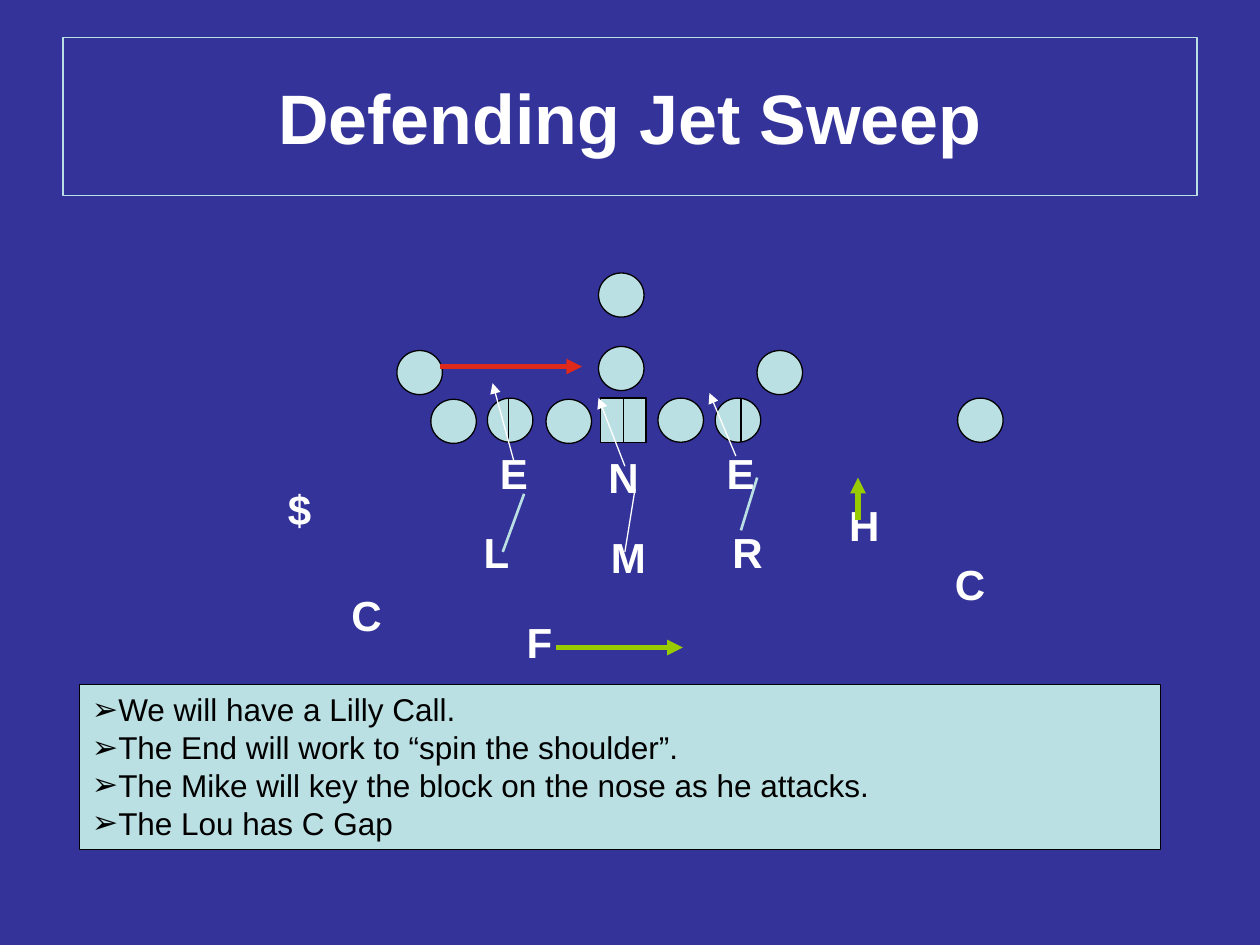
from lxml.etree import SubElement
from pptx import Presentation
from pptx.dml.color import RGBColor
from pptx.enum.shapes import MSO_CONNECTOR as Link, MSO_SHAPE as Form
from pptx.enum.text import MSO_ANCHOR as Anchor, PP_ALIGN as Align
from pptx.oxml.ns import qn
from pptx.util import Pt

NAVY = RGBColor(0x33, 0x33, 0x99)
PALE = RGBColor(0xBB, 0xE0, 0xE3)
WHITE = RGBColor(0xFF, 0xFF, 0xFF)
BLACK = RGBColor(0, 0, 0)
RED = RGBColor(0xDF, 0x29, 0x1B)
GREEN = RGBColor(0x99, 0xCC, 0x00)


class Board:
    """Holds the style and the current slide; lengths are in points."""
    face = "Arial"
    thin = 0.75

    def __init__(self, slide):
        self.slide = slide
        slide.background.fill.solid()
        slide.background.fill.fore_color.rgb = NAVY

    def shape(self, form, x, y, w, h, fill=PALE, edge=BLACK):
        item = self.slide.shapes.add_shape(form, Pt(x), Pt(y), Pt(w), Pt(h))
        item.shadow.inherit = False
        item.fill.solid()
        item.fill.fore_color.rgb = fill
        item.line.color.rgb = edge
        item.line.width = Pt(self.thin)
        return item

    def put_text(self, frame, lines, size, color, bold=False, align=Align.LEFT):
        frame.word_wrap = True
        frame.text = "\n".join(lines)
        for para in frame.paragraphs:
            para.alignment = align
            font = para.font
            font.name, font.size, font.bold = self.face, Pt(size), bold
            font.color.rgb = color

    def title(self, text, x, y, w, h):
        frame = self.shape(Form.RECTANGLE, x, y, w, h, NAVY, PALE).text_frame
        frame.vertical_anchor = Anchor.MIDDLE
        self.put_text(frame, [text], 40, WHITE, True, Align.CENTER)

    def label(self, text, x, y):
        box = self.slide.shapes.add_textbox(Pt(x), Pt(y), Pt(32.4), Pt(36))
        self.put_text(box.text_frame, [text], 24, WHITE, True)

    def notes(self, lines, x, y, w, h):
        frame = self.shape(Form.RECTANGLE, x, y, w, h).text_frame
        frame.vertical_anchor = Anchor.TOP
        self.put_text(frame, lines, 18, BLACK)
        for para in frame.paragraphs:
            props = para._p.get_or_add_pPr()
            props.set("marL", "0")
            props.set("indent", "0")
            SubElement(props, qn("a:buFont"), typeface=self.face)
            SubElement(props, qn("a:buChar"), char="➢")
            # Bullet settings come before the font defaults
            props.append(props.find(qn("a:defRPr")))

    def line(self, x1, y1, x2, y2, color, width=thin, arrow=False):
        item = self.slide.shapes.add_connector(
            Link.STRAIGHT, Pt(x1), Pt(y1), Pt(x2), Pt(y2))
        item.line.color.rgb = color
        item.line.width = Pt(width)
        if arrow:
            SubElement(item.line._get_or_add_ln(), qn("a:tailEnd"), type="triangle")
        SubElement(item._element.spPr, qn("a:effectLst"))


def main():
    deck = Presentation()
    deck.slide_width, deck.slide_height = Pt(720), Pt(540)
    board = Board(deck.slides.add_slide(deck.slide_layouts[6]))

    board.title("Defending Jet Sweep", 36, 21.6, 648, 90)

    # Offense: the center is square, the others are round
    front = 227.5
    board.shape(Form.RECTANGLE, 343.2, front, 26, 25.2)
    for x, y in [(246.2, 228.2), (278.5, front), (312, 228.2), (376, front),
                 (408.7, front), (547.2, front), (226.8, 200.3),
                 (432.6, 200.3), (342, 198), (342, 156)]:
        board.shape(Form.OVAL, x, y, 26, 25.2)
    for x in (290.4, 356.4, 423.4):
        board.line(x, front, x, front + 25, BLACK)

    # Defense
    for name, x, y in [("E", 278.6, 252), ("N", 340.6, 254.2), ("E", 408.2, 252.3),
                       ("L", 269.3, 297.4), ("M", 342, 300.2), ("R", 411.4, 297.4),
                       ("H", 478.1, 282.2), ("$", 157.4, 272.9), ("C", 193.7, 333.4),
                       ("C", 538.6, 315.4), ("F", 293.8, 348.5)]:
        board.label(name, x, y)

    # Rush of the linemen
    for ends in [(293.8, 264, 281.5, 219), (357.1, 266.4, 342, 227.5),
                 (420.5, 260.6, 405.4, 224.6)]:
        board.line(*ends, WHITE, arrow=True)

    # Paths of the linebackers
    board.line(287.3, 315.4, 299.5, 282.2, PALE, 1.5)
    board.line(357.1, 315.4, 362.9, 279.4, WHITE)
    board.line(423.4, 303.1, 432.7, 272.9, PALE, 1.5)

    # Sweep and the reaction to it
    board.line(251.3, 209.5, 332.6, 209.5, RED, 3, True)
    board.line(490.3, 297.4, 490.3, 272.9, GREEN, 3, True)
    board.line(317.5, 370, 390.2, 370, GREEN, 3, True)

    board.notes(["We will have a Lilly Call.",
                 "The End will work to “spin the shoulder”.",
                 "The Mike will key the block on the nose as he attacks.",
                 "The Lou has C Gap"], 45.4, 391, 617.8, 94.5)

    deck.save("out.pptx")


if __name__ == "__main__":
    main()
